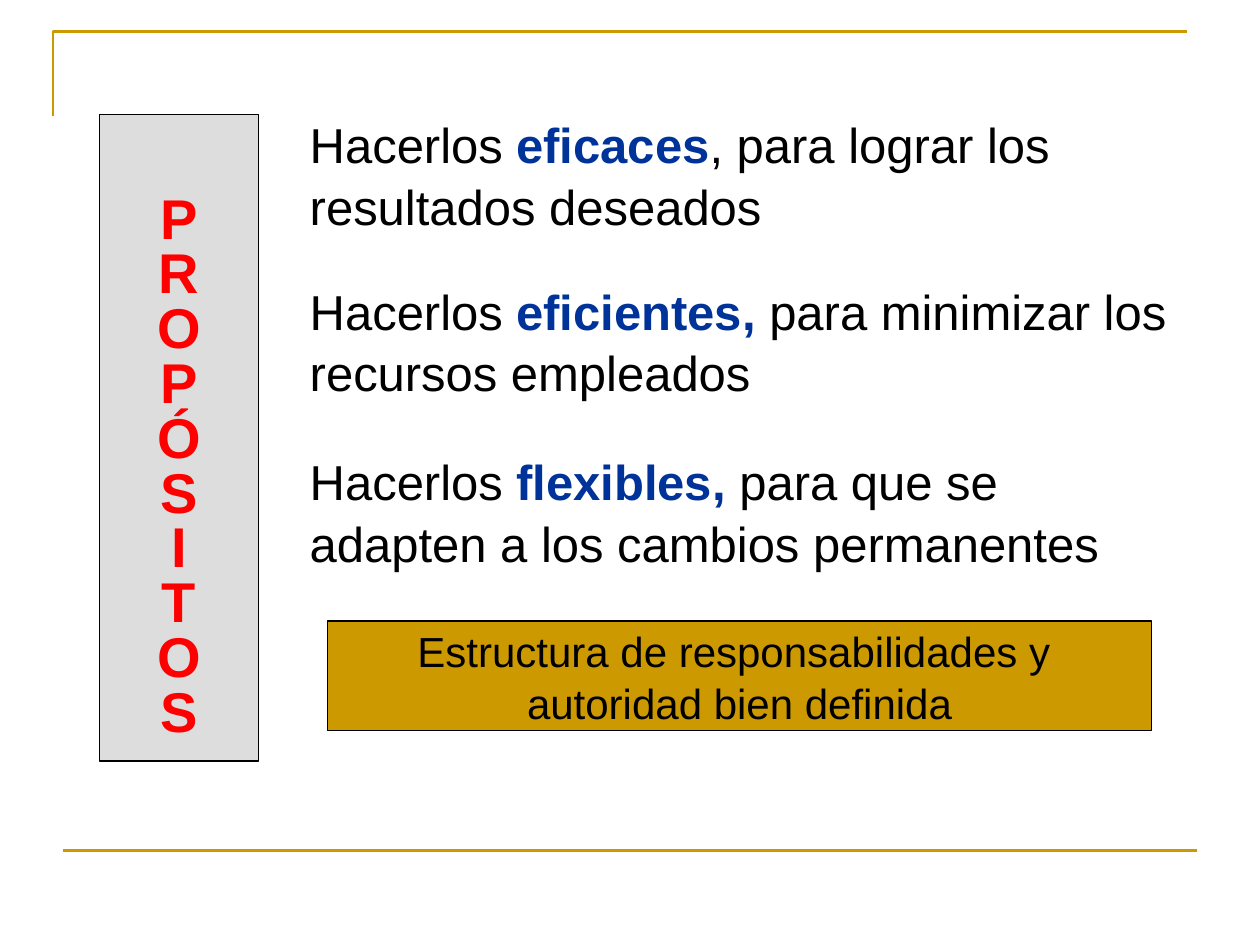
from dataclasses import dataclass

from lxml import etree
from pptx import Presentation, util as u
from pptx.dml.color import RGBColor
from pptx.enum import shapes, text
from pptx.oxml.ns import qn

COLS, ROWS = 100, 75


@dataclass(frozen=True)
class Theme:
    font: str = "Arial"
    ink: str = "000000"
    accent: str = "003399"
    title: str = "FF0000"
    gold: str = "CC9900"
    panel: str = "DDDDDD"
    title_size: float = 32
    body_size: float = 28
    note_size: float = 24
    rule: float = 1.5
    border: float = 0.75


@dataclass(frozen=True)
class Box:
    col: float
    row: float
    cols: float
    rows: float


@dataclass(frozen=True)
class Statement:
    box: Box
    key: str
    rest: str


THEME = Theme()
TITLE_BOX = Box(7.9, 9.1, 12.6, 51.3)
NOTE_BOX = Box(26, 49.3, 65.4, 8.7)
STATEMENTS = [
    Statement(Box(23.6, 8.4, 73.2, 10.3), "eficaces", ", para lograr los resultados deseados"),
    Statement(Box(23.6, 21.6, 75.2, 10.3), "eficientes,", " para minimizar los recursos empleados"),
    Statement(Box(23.6, 35.1, 68.5, 10.3), "flexibles,", " para que se adapten a los cambios permanentes"),
]
NOTE = ["Estructura de responsabilidades y ", "autoridad bien definida"]

prs = Presentation()
prs.slide_width, prs.slide_height = u.Inches(10), u.Inches(7.5)


def x(col: float) -> int:
    return int(prs.slide_width * col / COLS)


def y(row: float) -> int:
    return int(prs.slide_height * row / ROWS)


def frame(box: Box) -> tuple[int, int, int, int]:
    return x(box.col), y(box.row), x(box.cols), y(box.rows)


def rgb(color: str) -> RGBColor:
    return RGBColor.from_string(color)


def add_run(p, words: str, *, size: float, color: str = THEME.ink, bold: bool = False) -> None:
    r = p.add_run()
    r.text = words
    r.font.name, r.font.size, r.font.bold = THEME.font, u.Pt(size), bold
    r.font.color.rgb = rgb(color)


def add_lines(tf, lines, *, spacing, **style) -> None:
    for i, line in enumerate(lines):
        p = tf.add_paragraph() if i else tf.paragraphs[0]
        p.alignment = text.PP_ALIGN.CENTER
        p.line_spacing = spacing
        add_run(p, line, **style)


def style_line(line, color: str, width: float) -> None:
    line.color.rgb = rgb(color)
    line.width = u.Pt(width)


def style_panel(sp, fill: str) -> None:
    sp.fill.solid()
    sp.fill.fore_color.rgb = rgb(fill)
    style_line(sp.line, THEME.ink, THEME.border)


def add_rules(s) -> None:
    fb = s.shapes.build_freeform(x(4.2), y(9.2))
    fb.add_line_segments([(x(4.2), y(2.5)), (x(94.2), y(2.5))], close=False)
    corner = fb.convert_to_shape()
    corner.shadow.inherit = False
    corner.fill.background()
    style_line(corner.line, THEME.gold, THEME.rule)

    footer = s.shapes.add_connector(shapes.MSO_CONNECTOR.STRAIGHT, x(5), y(67.5), x(95), y(67.5))
    etree.SubElement(footer._element.spPr, qn("a:effectLst"))
    style_line(footer.line, THEME.gold, THEME.rule)


def add_title(s) -> None:
    sp = s.shapes.title
    sp.left, sp.top, sp.width, sp.height = frame(TITLE_BOX)
    style_panel(sp, THEME.panel)
    tf = sp.text_frame
    tf.auto_size = text.MSO_AUTO_SIZE.NONE
    tf.vertical_anchor = text.MSO_ANCHOR.BOTTOM
    tf.margin_bottom = u.Inches(0.14)
    add_lines(tf, "PROPÓSITOS", spacing=u.Pt(31.3), size=THEME.title_size, color=THEME.title, bold=True)


def add_statement(s, item: Statement) -> None:
    tf = s.shapes.add_textbox(*frame(item.box)).text_frame
    tf.word_wrap = True
    p = tf.paragraphs[0]
    p.line_spacing = 1.05
    add_run(p, "Hacerlos ", size=THEME.body_size)
    add_run(p, item.key, size=THEME.body_size, color=THEME.accent, bold=True)
    add_run(p, item.rest, size=THEME.body_size)


def add_note(s) -> None:
    sp = s.shapes.add_shape(shapes.MSO_SHAPE.RECTANGLE, *frame(NOTE_BOX))
    sp.shadow.inherit = False
    style_panel(sp, THEME.gold)
    tf = sp.text_frame
    tf.word_wrap = False
    tf.vertical_anchor = text.MSO_ANCHOR.MIDDLE
    add_lines(tf, NOTE, spacing=1.03, size=THEME.note_size)


def main() -> None:
    s = prs.slides.add_slide(prs.slide_layouts[5])
    add_rules(s)
    add_title(s)
    for item in STATEMENTS:
        add_statement(s, item)
    add_note(s)
    prs.save("out.pptx")


if __name__ == "__main__":
    main()
